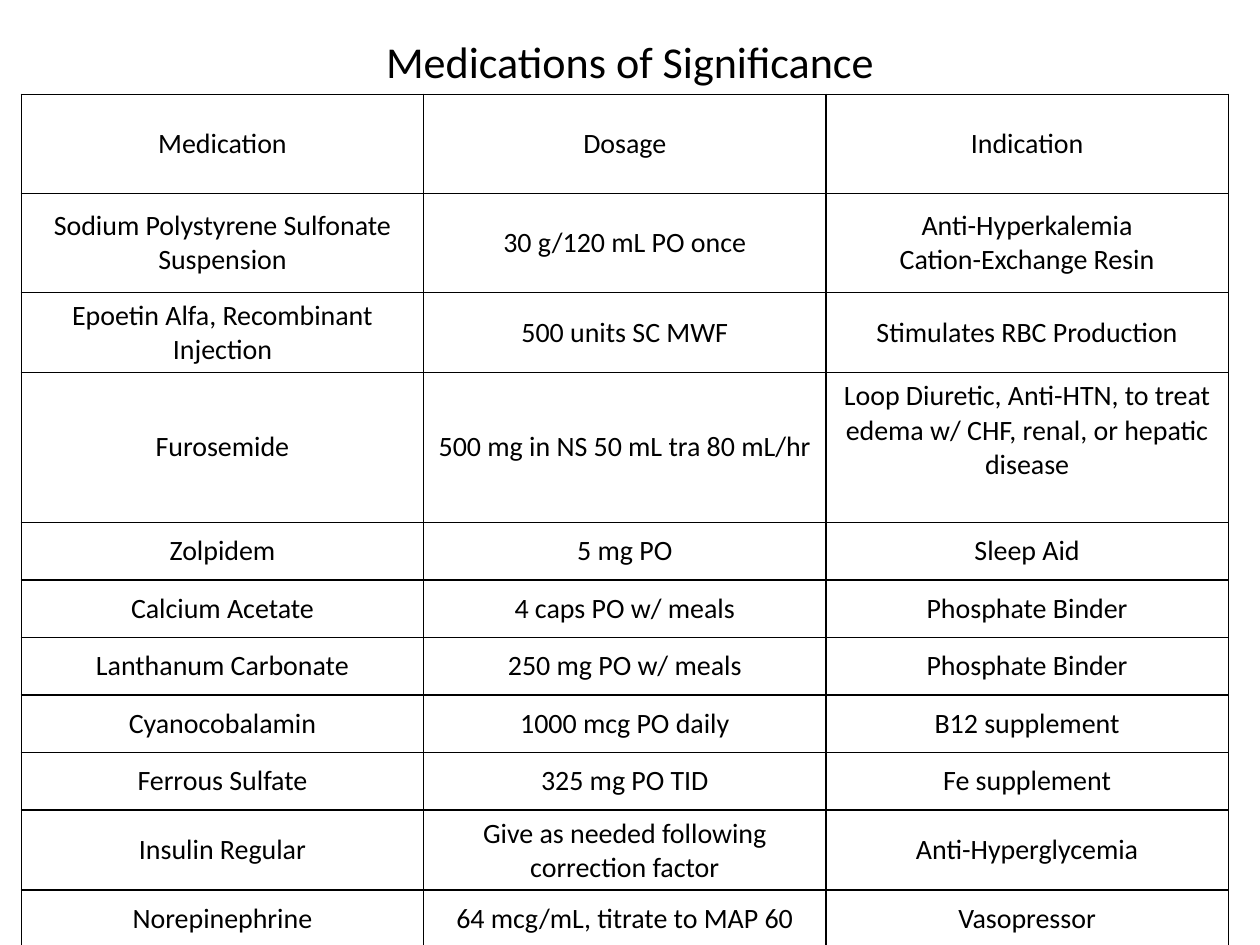
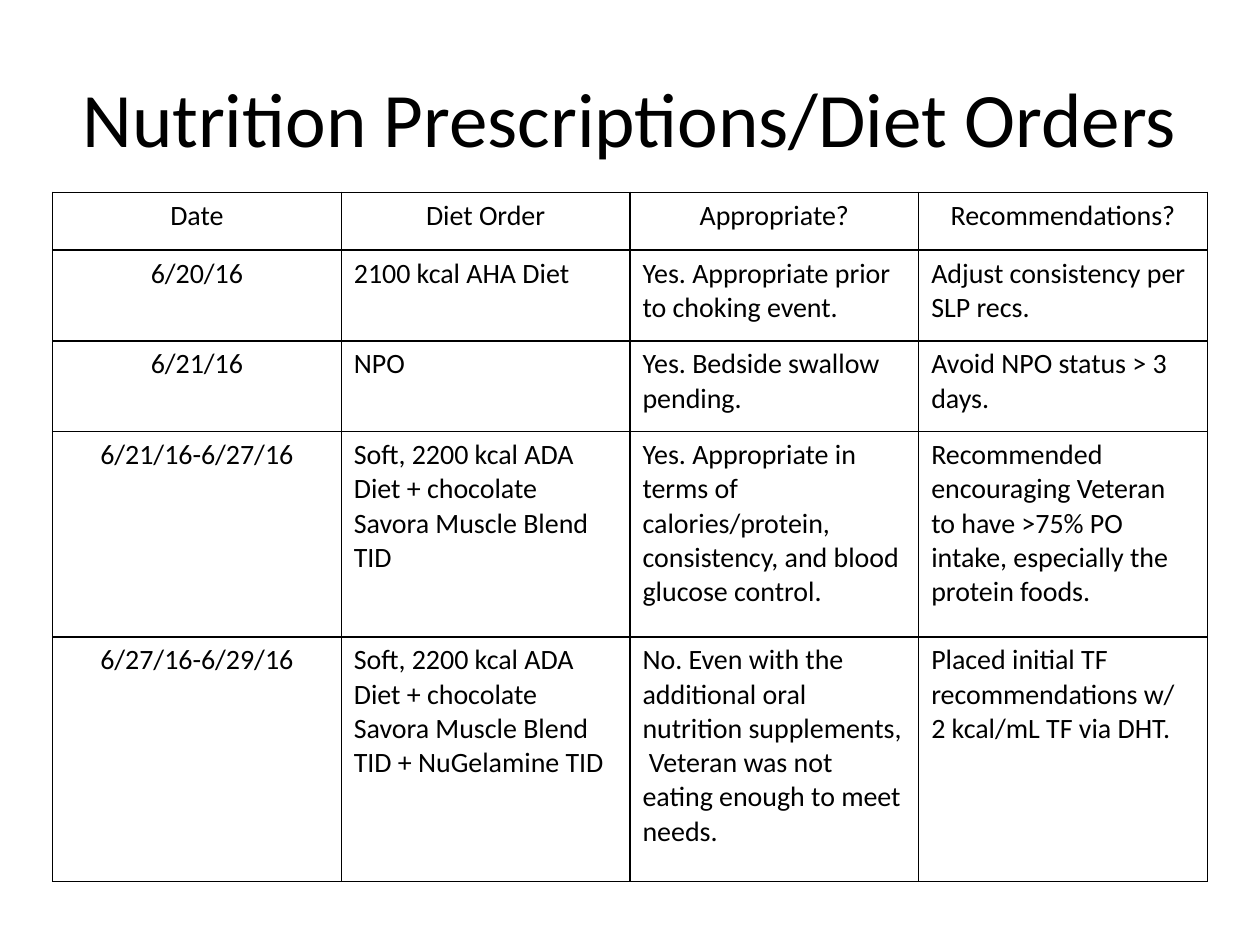
from lxml.etree import SubElement
from pptx import Presentation
from pptx.dml.color import RGBColor
from pptx.enum.text import MSO_ANCHOR, PP_ALIGN
from pptx.oxml.ns import qn
from pptx.util import Cm, Pt

FONT = "Calibri"
INK = "000000"
PAPER = "FFFFFF"
BODY_SIZE = 16
BORDER_WIDTH = Pt(1)

MEDICATIONS = [
    ("Medication", "Dosage", "Indication"),
    ("Sodium Polystyrene Sulfonate Suspension", "30 g/120 mL PO once",
     "Anti-Hyperkalemia\nCation-Exchange Resin"),
    ("Epoetin Alfa, Recombinant Injection", "500 units SC MWF",
     "Stimulates RBC Production"),
    ("Furosemide", "500 mg in NS 50 mL tra 80 mL/hr",
     "Loop Diuretic, Anti-HTN, to treat edema w/ CHF, renal, or hepatic disease"),
    ("Zolpidem", "5 mg PO", "Sleep Aid"),
    ("Calcium Acetate", "4 caps PO w/ meals", "Phosphate Binder"),
    ("Lanthanum Carbonate", "250 mg PO w/ meals", "Phosphate Binder"),
    ("Cyanocobalamin", "1000 mcg PO daily", "B12 supplement"),
    ("Ferrous Sulfate", "325 mg PO TID", "Fe supplement"),
    ("Insulin Regular", "Give as needed following correction factor",
     "Anti-Hyperglycemia"),
    ("Norepinephrine", "64 mcg/mL, titrate to MAP 60", "Vasopressor"),
]
MEDICATION_HEIGHTS = [2, 2, 1.16, 3.02] + [1.16] * 7

DIET_ORDERS = [
    ("Date", "Diet Order", "Appropriate?", "Recommendations?"),
    ("6/20/16", "2100 kcal AHA Diet",
     "Yes. Appropriate prior to choking event.",
     "Adjust consistency per SLP recs."),
    ("6/21/16", "NPO", "Yes. Bedside swallow  pending.",
     "Avoid NPO status > 3 days."),
    ("6/21/16-6/27/16",
     "Soft, 2200 kcal ADA Diet + chocolate Savora Muscle Blend TID",
     "Yes. Appropriate in terms of calories/protein, consistency, "
     "and blood glucose control.",
     "Recommended encouraging Veteran to have >75% PO intake, "
     "especially the protein foods."),
    ("6/27/16-6/29/16",
     "Soft, 2200 kcal ADA Diet + chocolate Savora Muscle Blend TID + NuGelamine TID",
     "No. Even with the additional oral nutrition supplements,  "
     "Veteran was not eating enough to meet needs.",
     "Placed initial TF recommendations w/ 2 kcal/mL TF via DHT."),
]
DIET_HEIGHTS = [1.16, 1.83, 1.83, 4.14, 4.93]


def color(value):
    return RGBColor.from_string(value)


def style_text(frame, size, alignment):
    for para in frame.paragraphs:
        para.alignment = alignment
        for span in para.runs:
            span.font.name = FONT
            span.font.size = Pt(size)
            span.font.bold = False
            span.font.color.rgb = color(INK)


def add_title(page, text, height, size):
    box = page.shapes.add_textbox(Cm(1.27), Cm(0.76), Cm(22.86), Cm(height))
    frame = box.text_frame
    frame.word_wrap = True
    frame.vertical_anchor = MSO_ANCHOR.MIDDLE
    frame.text = text
    style_text(frame, size, PP_ALIGN.CENTER)


def add_borders(cell):
    properties = cell._tc.get_or_add_tcPr()
    for side in ("a:lnL", "a:lnR", "a:lnT", "a:lnB"):
        line = SubElement(properties, qn(side), w=str(BORDER_WIDTH))
        fill = SubElement(line, qn("a:solidFill"))
        SubElement(fill, qn("a:srgbClr"), val=INK)


def add_grid(page, rows, heights, left, top, column_width, anchor, all_centered):
    column_count = len(rows[0])
    table = page.shapes.add_table(
        len(rows), column_count, Cm(left), Cm(top),
        Cm(column_width * column_count), Cm(sum(heights))).table
    table.first_row = False
    table.horz_banding = False
    for column in table.columns:
        column.width = Cm(column_width)
    for row_index, (texts, height) in enumerate(zip(rows, heights)):
        table.rows[row_index].height = Cm(height)
        for column_index, text in enumerate(texts):
            cell = table.cell(row_index, column_index)
            add_borders(cell)
            cell.fill.solid()
            cell.fill.fore_color.rgb = color(PAPER)
            cell.vertical_anchor = anchor
            cell.text_frame.text = text
            centered = all_centered or row_index == 0 or column_index == 0
            style_text(cell.text_frame, BODY_SIZE,
                       PP_ALIGN.CENTER if centered else PP_ALIGN.LEFT)
    return table


def add_medications(page):
    add_title(page, "Medications of Significance", 0.94, 25.2)
    table = add_grid(page, MEDICATIONS, MEDICATION_HEIGHTS, 0.43, 1.9, 8.11,
                     MSO_ANCHOR.MIDDLE, True)
    furosemide_indication = table.cell(3, 2)
    furosemide_indication.margin_bottom = Cm(0.81)


def add_diet_orders(page):
    add_title(page, "Nutrition Prescriptions/Diet Orders", 3.18, 44)
    add_grid(page, DIET_ORDERS, DIET_HEIGHTS, 1.06, 3.88, 5.82,
             MSO_ANCHOR.TOP, False)


def main():
    deck = Presentation()
    deck.slide_width = Cm(25.4)
    deck.slide_height = Cm(19.05)
    for fill_page in (add_medications, add_diet_orders):
        page = deck.slides.add_slide(deck.slide_layouts[6])
        page.background.fill.solid()
        page.background.fill.fore_color.rgb = color(PAPER)
        fill_page(page)
    deck.save("out.pptx")


if __name__ == "__main__":
    main()
